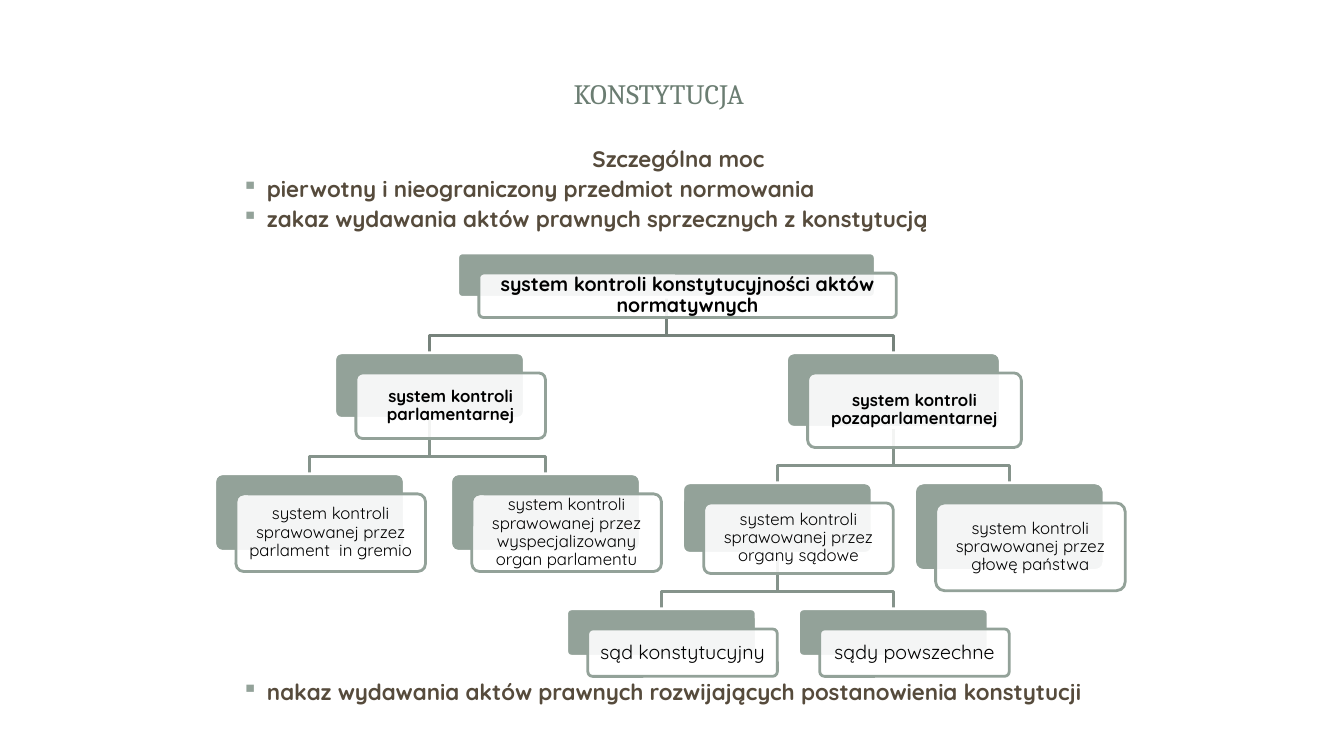
from dataclasses import dataclass

from lxml import etree
from pptx import Presentation
from pptx.dml.color import RGBColor
from pptx.enum.shapes import MSO_SHAPE
from pptx.enum.text import MSO_ANCHOR, PP_ALIGN
from pptx.oxml.ns import qn
from pptx.util import Inches, Pt

ROUNDED = MSO_SHAPE.ROUNDED_RECTANGLE
MIDDLE = MSO_ANCHOR.MIDDLE
TOP = MSO_ANCHOR.TOP
CENTER = PP_ALIGN.CENTER
JUSTIFY = PP_ALIGN.JUSTIFY


@dataclass(frozen=True)
class Theme:
    heading_font: str = "Cambria"
    body_font: str = "Quicksand"
    heading: RGBColor = RGBColor.from_string("6B7D72")
    body: RGBColor = RGBColor.from_string("564B3C")
    sage: RGBColor = RGBColor.from_string("93A299")
    upper_link: RGBColor = RGBColor.from_string("76827B")
    lower_link: RGBColor = RGBColor.from_string("85938B")
    white: RGBColor = RGBColor.from_string("FFFFFF")
    black: RGBColor = RGBColor.from_string("000000")
    heading_size: int = 20
    body_size: int = 16
    large: int = 14
    small: int = 12


theme = Theme()


def write(paragraph, text, font, size, color, bold=False):
    run = paragraph.add_run()
    run.text = text
    run.font.name = font
    run.font.size = Pt(size)
    run.font.color.rgb = color
    run.font.bold = bold


def add_card(left, top, width, height, fill, line):
    card = slide.shapes.add_shape(ROUNDED, Inches(left), Inches(top), Inches(width), Inches(height))
    card.adjustments[0] = 0.1
    card.shadow.inherit = False
    card.fill.solid()
    card.fill.fore_color.rgb = fill
    card.line.color.rgb = line
    card.line.width = Pt(2)
    return card


prs = Presentation()
prs.slide_width = Inches(13.33)
prs.slide_height = Inches(7.5)
slide = prs.slides.add_slide(prs.slide_layouts[6])

title = slide.shapes.add_textbox(Inches(2.02), Inches(0.36), Inches(9.03), Inches(1.14)).text_frame
title.word_wrap = True
title.vertical_anchor = MIDDLE
title.paragraphs[0].alignment = CENTER
write(title.paragraphs[0], "KONSTYTUCJA", theme.heading_font, theme.heading_size, theme.heading)

statements = [
    (1.39, 1.0, [
        ("Szczególna moc", False),
        ("pierwotny i nieograniczony przedmiot normowania", True),
        ("zakaz wydawania aktów prawnych sprzecznych z konstytucją", True),
    ]),
    (6.68, 0.4, [("nakaz wydawania aktów prawnych rozwijających postanowienia konstytucji", True)]),
]
for top, height, lines in statements:
    statement = slide.shapes.add_textbox(Inches(2.17), Inches(top), Inches(9), Inches(height)).text_frame
    statement.word_wrap = True
    statement.vertical_anchor = TOP
    for index, (text, bulleted) in enumerate(lines):
        paragraph = statement.add_paragraph() if index else statement.paragraphs[0]
        paragraph.alignment = JUSTIFY if bulleted else CENTER
        paragraph.space_before = Pt(2.2 if index else 0)
        properties = paragraph._p.get_or_add_pPr()
        properties.set("marL", str(Inches(0.38 if bulleted else 0.12)))
        if bulleted:
            properties.set("indent", str(Inches(-0.25)))
            bullet_color = etree.SubElement(properties, qn("a:buClr"))
            etree.SubElement(bullet_color, qn("a:srgbClr"), val=str(theme.sage))
            etree.SubElement(properties, qn("a:buChar"), char="▪")
        write(paragraph, text, theme.body_font, theme.body_size, theme.body, True)

ROOT_TOP, LEVEL_GAP, ELBOW_RISE = 2.51, 0.55, 0.17
OFFSET_X, OFFSET_Y = 0.21, 0.2
systems = [
    ("root", None, 6.61, 4.14, 0.44, theme.large, True, "system kontroli konstytucyjności aktów normatywnych"),
    ("parliamentary", "root", 4.26, 1.88, 0.65, theme.small, True, "system kontroli parlamentarnej"),
    ("plenary", "parliamentary", 3.07, 1.88, 0.77, theme.small, False,
     "system kontroli sprawowanej przez parlament  in gremio"),
    ("specialised", "parliamentary", 5.41, 1.88, 0.77, theme.small, False,
     "system kontroli sprawowanej przez wyspecjalizowany organ parlamentu"),
    ("external", "root", 8.86, 2.12, 0.74, theme.small, True, "system kontroli pozaparlamentarnej"),
    ("judicial", "external", 7.71, 1.88, 0.7, theme.small, False,
     "system kontroli sprawowanej przez organy sądowe"),
    ("constitutional", "judicial", 6.56, 1.88, 0.47, theme.large, False, "sąd konstytucyjny"),
    ("common", "judicial", 8.86, 1.88, 0.47, theme.large, False, "sądy powszechne"),
    ("head of state", "external", 10.01, 1.88, 0.87, theme.small, False,
     "system kontroli sprawowanej przez głowę państwa"),
]

tops, bottoms, centers = {}, {}, {}
for name, parent, center, width, height, size, bold, text in systems:
    tops[name] = bottoms[parent] + LEVEL_GAP if parent else ROOT_TOP
    bottoms[name] = tops[name] + height
    centers[name] = center
    if parent:
        elbow = tops[name] - ELBOW_RISE
        outline = slide.shapes.build_freeform(Inches(centers[parent]), Inches(bottoms[parent]))
        outline.add_line_segments([
            (Inches(centers[parent]), Inches(elbow)),
            (Inches(center), Inches(elbow)),
            (Inches(center), Inches(tops[name])),
        ], close=False)
        link = outline.convert_to_shape()
        link.shadow.inherit = False
        link.fill.background()
        link.line.color.rgb = theme.upper_link if parent == "root" else theme.lower_link
        link.line.width = Pt(2)

for name, parent, center, width, height, size, bold, text in systems:
    left = center - width / 2
    add_card(left, tops[name], width, height, theme.sage, theme.white)
    front = add_card(left + OFFSET_X, tops[name] + OFFSET_Y, width, height, theme.white, theme.sage)
    front_color = front._element.spPr.find(qn("a:solidFill")).find(qn("a:srgbClr"))
    etree.SubElement(front_color, qn("a:alpha"), val="90000")
    label = front.text_frame
    label.word_wrap = True
    label.vertical_anchor = MIDDLE
    label.margin_left = label.margin_right = label.margin_top = label.margin_bottom = Inches(0.07)
    label.paragraphs[0].alignment = CENTER
    label.paragraphs[0].line_spacing = 0.9
    write(label.paragraphs[0], text, theme.body_font, size, theme.black, bold)

prs.save("out.pptx")
